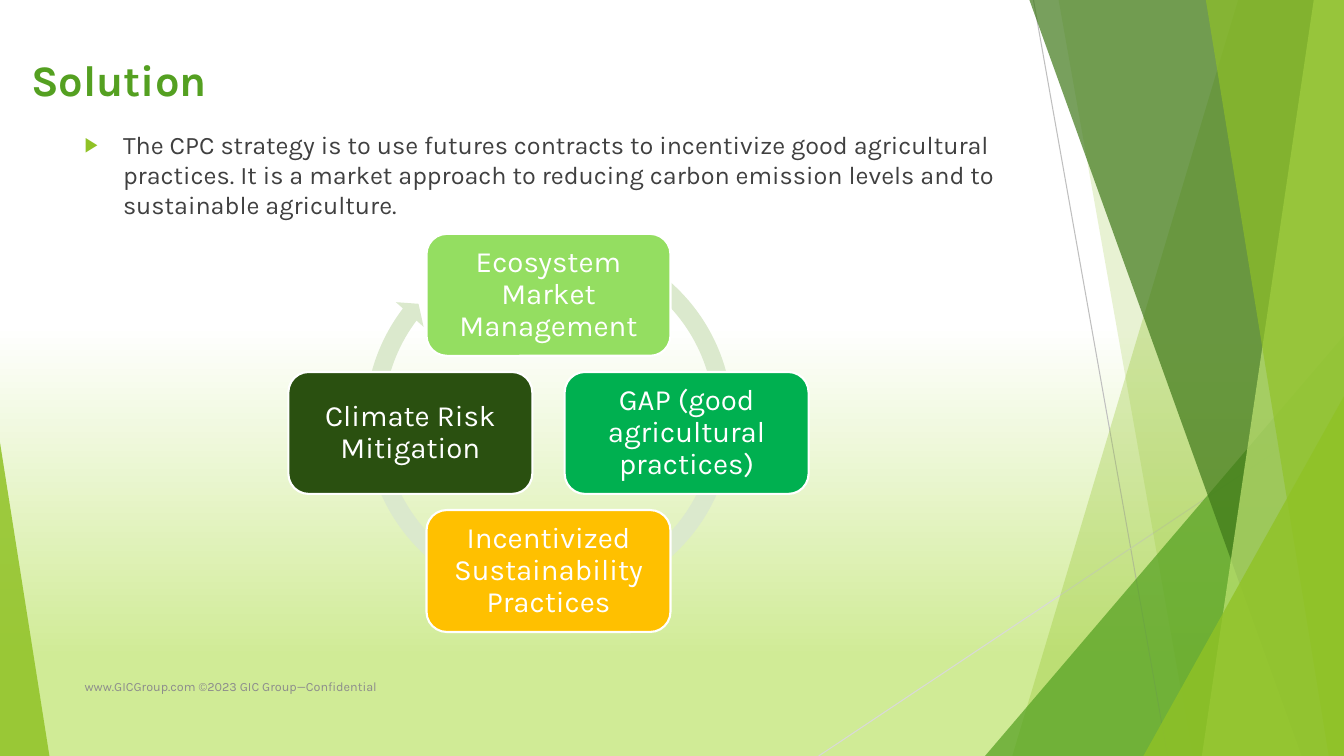
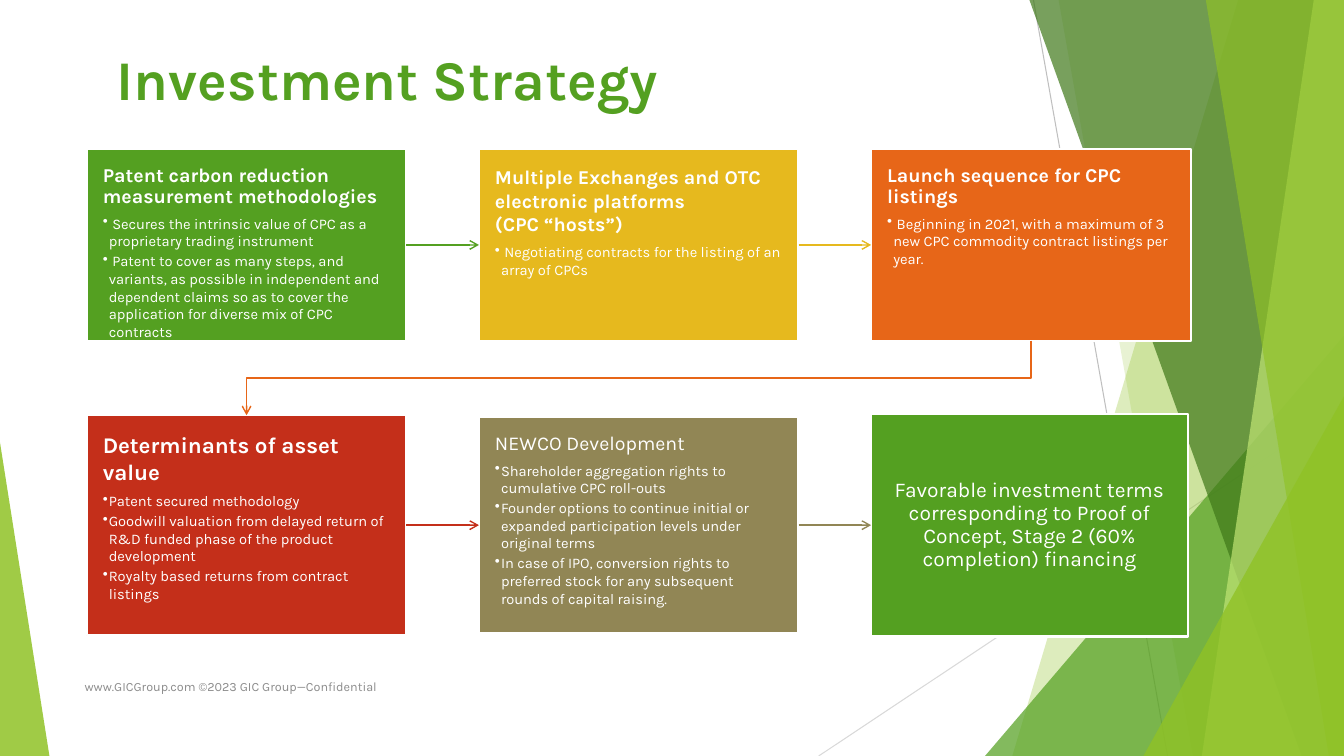
from copy import deepcopy
from dataclasses import dataclass

from lxml import etree
from pptx import Presentation
from pptx import util as u
from pptx.dml.color import RGBColor
from pptx.enum import shapes, text
from pptx.oxml.ns import qn


@dataclass(frozen=True)
class Theme:
    """Colours, font and type sizes of the deck."""
    font: str = "Karla"
    white: str = "FFFFFF"
    ink: str = "404040"
    muted: str = "8C8C8C"
    green: str = "54A021"
    lime: str = "90C226"
    pale_lime: str = "C0E474"
    forest: str = "3F7819"
    glow: str = "D0EB96"
    ring: str = "DBE9CD"
    light_green: str = "94DE61"
    emerald: str = "00B050"
    amber: str = "FFC000"
    dark_green: str = "2A5010"
    gold: str = "E6B91E"
    orange: str = "E76618"
    red: str = "C42F1A"
    olive: str = "918655"
    body_size: float = 18
    cycle_size: float = 21
    heading_size: float = 14
    detail_size: float = 10.5
    footer_size: float = 9


THEME = Theme()
WIDTH, HEIGHT = 13.33, 7.5
LEFT, MIDDLE = text.PP_ALIGN.LEFT, text.MSO_ANCHOR.MIDDLE
CENTER, TOP = text.PP_ALIGN.CENTER, text.MSO_ANCHOR.TOP
RECTANGLE = shapes.MSO_SHAPE.RECTANGLE
FOOTER = "www.GICGroup.com ©2023 GIC Group—Confidential"


def apply(target, values):
    """Set every attribute in values on target."""
    for name, value in values.items():
        setattr(target, name, value)


def rgb(color):
    """Turn a hex string into a colour."""
    return RGBColor.from_string(color)


def inches(values):
    """Convert a sequence of numbers to lengths."""
    return [u.Inches(value) for value in values]


def place(shape, at):
    """Move and size a shape."""
    apply(shape, dict(zip(("left", "top", "width", "height"), inches(at))))


def add_element(parent, tag, **attributes):
    """Append a DrawingML element."""
    return etree.SubElement(parent, qn(tag), attributes)


def paint(shape, color, alpha=100, outline=None):
    """Give a shape a flat fill and an optional outline."""
    shape.shadow.inherit = False
    shape.fill.solid()
    shape.fill.fore_color.rgb = rgb(color)
    if alpha < 100:
        tone = shape.element.spPr.find(".//" + qn("a:srgbClr"))
        add_element(tone, "a:alpha", val=str(alpha * 1000))
    if outline:
        shape.line.color.rgb = rgb(outline)
        shape.line.width = u.Pt(1.5)
    else:
        shape.line.fill.background()


def set_frame(shape, anchor=TOP, **margins):
    """Format a text frame and return it."""
    frame = shape.text_frame
    apply(frame, {"word_wrap": True, "auto_size": text.MSO_AUTO_SIZE.NONE,
                  "vertical_anchor": anchor})
    apply(frame, {f"margin_{side}": u.Inches(size) for side, size in margins.items()})
    return frame


def add_bullet(para, char, indent, color=None, percent=100):
    """Give a paragraph a hanging bullet."""
    props = para._p.get_or_add_pPr()
    length = u.Inches(indent)
    props.set("marL", str(length))
    props.set("indent", str(-length))
    if color:
        add_element(add_element(props, "a:buClr"), "a:srgbClr", val=color)
    add_element(props, "a:buSzPct", val=str(percent * 1000))
    add_element(props, "a:buChar", char=char)


def write(para, words, size, color=THEME.white, bold=False, align=LEFT, spacing=1.0, after=0):
    """Write formatted words into a paragraph."""
    para.text = words
    apply(para, {"alignment": align, "line_spacing": spacing,
                 "space_before": u.Pt(0), "space_after": u.Pt(after)})
    for span in para.runs:
        apply(span.font, {"name": THEME.font, "size": u.Pt(size), "bold": bold})
        span.font.color.rgb = rgb(color)
    for line_break in para._p.findall(qn("a:br")):
        line_break.append(deepcopy(para.runs[0]._r.rPr))


def equal_margins(size):
    """Return the same margin for all four sides."""
    return dict.fromkeys(("left", "top", "right", "bottom"), size)


def draw_line(page, start, end, color, weight, kind=shapes.MSO_CONNECTOR.STRAIGHT, arrow=False):
    """Draw a connector without a shadow."""
    line = page.shapes.add_connector(kind, *inches((*start, *end)))
    line.line.color.rgb = rgb(color)
    line.line.width = u.Pt(weight)
    props = line.element.spPr
    if arrow:
        add_element(props.find(qn("a:ln")), "a:tailEnd", type="arrow")
    add_element(props, "a:effectLst")
    return line


def draw_band(page, top_x, bottom_x, color, alpha):
    """Draw a full-height band that reaches the right edge."""
    outline = page.shapes.build_freeform(*inches((top_x, 0)), scale=1.0)
    corners = ((WIDTH, 0), (WIDTH, HEIGHT), (bottom_x, HEIGHT))
    outline.add_line_segments([inches(corner) for corner in corners], close=True)
    paint(outline.convert_to_shape(), color, alpha)


def draw_triangle(page, left, top, width, apex, color, alpha):
    """Draw a triangle that stands on the bottom edge."""
    shape = page.shapes.add_shape(shapes.MSO_SHAPE.ISOSCELES_TRIANGLE,
                                  *inches((left, top, width, HEIGHT - top)))
    shape.adjustments[0] = apex
    paint(shape, color, alpha)


def decorate(page):
    """Draw the facets and the footer that all slides share."""
    draw_line(page, (10.25, 0), (11.58, HEIGHT), "BFBFBF", 0.75)
    draw_line(page, (WIDTH, 4.03), (8.12, HEIGHT), "D9D9D9", 0.75)
    draw_band(page, 12.28, 10.04, THEME.lime, 30)
    draw_band(page, 10.5, 11.83, THEME.lime, 20)
    draw_triangle(page, 9.77, 3.33, 3.56, 1, THEME.green, 72)
    draw_band(page, 10.21, 12.91, THEME.forest, 70)
    draw_band(page, 13.03, 11.92, THEME.pale_lime, 70)
    draw_band(page, 11.96, 13.18, THEME.lime, 65)
    draw_triangle(page, 11.34, 3.93, 1.99, 1, THEME.lime, 80)
    draw_triangle(page, 0, 4.39, 0.49, 0, THEME.lime, 85)
    box = page.shapes.add_textbox(*inches((0.74, 6.61, 6.89, 0.4)))
    write(set_frame(box, MIDDLE).paragraphs[0], FOOTER, THEME.footer_size, THEME.muted)


def new_page(deck, layout, title, at, size, spacing=1.0, anchor=TOP, **margins):
    """Add a decorated slide with its title."""
    page = deck.slides.add_slide(deck.slide_layouts[layout])
    decorate(page)
    place(page.shapes.title, at)
    frame = set_frame(page.shapes.title, anchor, **margins)
    write(frame.paragraphs[0], title, size, THEME.green, bold=True, spacing=spacing)
    return page


def draw_cycle(page):
    """Draw the four steps around a circular arrow."""
    ring = page.shapes.add_shape(shapes.MSO_SHAPE.CIRCULAR_ARROW,
                                 *inches((3.53, 2.25, 3.83, 3.83)))
    for index, value in enumerate((0.047, 2.729, 130.267, 178.992, 0.048)):
        ring.adjustments[index] = value
    paint(ring, THEME.ring)
    steps = (
        ("Ecosystem Market Management", THEME.light_green, 0, -1),
        ("GAP (good agricultural practices)", THEME.emerald, 1, 0),
        ("Incentivized Sustainability Practices", THEME.amber, 0, 1),
        ("Climate Risk Mitigation", THEME.dark_green, -1, 0),
    )
    radius = 1.37
    for words, color, across, down in steps:
        at = (4.23 + across * radius, 3.69 + down * radius, 2.42, 1.21)
        box = page.shapes.add_shape(shapes.MSO_SHAPE.ROUNDED_RECTANGLE, *inches(at))
        paint(box, color, outline=THEME.white)
        frame = set_frame(box, MIDDLE, **equal_margins(0.09))
        write(frame.paragraphs[0], words, THEME.cycle_size, align=CENTER, spacing=0.9)


def solution_page(deck):
    """Build the solution slide."""
    page = new_page(deck, 1, "Solution", (0.21, 0.49, 10.13, 0.65), 31, 0.9, MIDDLE)
    fill = page.background.fill
    fill.gradient()
    fill.gradient_angle = 270
    for stop, position, color in zip(fill.gradient_stops, (0.43, 0.87),
                                     (THEME.white, THEME.glow)):
        stop.position = position
        stop.color.rgb = rgb(color)
    body = page.placeholders[1]
    place(body, (0.74, 1.23, 9.4, 4.24))
    para = set_frame(body).paragraphs[0]
    add_bullet(para, "▶", 0.38, THEME.lime, 80)
    write(para, "The CPC strategy is to use futures contracts to incentivize good agricultural "
          "practices. It is a market approach to reducing carbon emission levels and to "
          "sustainable agriculture.", THEME.body_size, THEME.ink)
    draw_cycle(page)


def draw_card(page, column, middle, height, color, heading, details=(),
              width=3.17, anchor=TOP, **style):
    """Draw a card with a heading and bulleted details."""
    at = (0.86 + 3.89 * column, middle - height / 2, width, height)
    card = page.shapes.add_shape(RECTANGLE, *inches(at))
    paint(card, color, outline=THEME.white)
    frame = set_frame(card, anchor, **equal_margins(0.16))
    write(frame.paragraphs[0], heading,
          **{"size": THEME.heading_size, "after": 5 if details else 0, **style})
    for detail in details:
        para = frame.add_paragraph()
        add_bullet(para, "•", 0.06)
        write(para, detail, THEME.detail_size, after=1.6)
    return card


def join(page, source, target, color):
    """Join two neighbouring cards with an arrow."""
    arrow = draw_line(page, (0, 0), (1, 0), color, 1, arrow=True)
    arrow.begin_connect(source, 3)
    arrow.end_connect(target, 1)


def join_rows(page, source, target, color):
    """Join the bottom of one card to the top of a card further left."""
    arrow = draw_line(page, (0, 0), (1, 1), color, 1, shapes.MSO_CONNECTOR.ELBOW, True)
    arrow.begin_connect(source, 2)
    arrow.end_connect(target, 0)
    across, down = arrow.width, arrow.height
    center_x, center_y = arrow.left + across // 2, arrow.top + down // 2
    apply(arrow, {"left": center_x - down // 2, "top": center_y - across // 2,
                  "width": down, "height": across})
    apply(arrow.element.spPr.xfrm, {"flipH": False, "flipV": False, "rot": 90.0})


def strategy_page(deck):
    """Build the investment strategy slide."""
    page = new_page(deck, 5, "Investment Strategy", (1.06, 0.33, 11.15, 1.2), 40, top=0.11)
    upper, lower = 2.43, 5.21
    patent = draw_card(
        page, 0, upper, 1.9, THEME.green, "Patent carbon reduction measurement methodologies",
        (" Secures the intrinsic value of CPC as a proprietary trading instrument",
         " Patent to cover as many steps, and variants, as possible in independent and dependent "
         "claims so as to cover the application for diverse mix of CPC contracts"),
        bold=True, spacing=0.9)
    exchanges = draw_card(
        page, 1, upper, 1.9, THEME.gold,
        "Multiple Exchanges and OTC electronic platforms\v(CPC “hosts”)",
        (" Negotiating contracts for the listing of an array of CPCs",), bold=True)
    launch = draw_card(
        page, 2, upper, 1.9, THEME.orange, "Launch sequence for CPC listings",
        (" Beginning in 2021, with a maximum of 3 new CPC commodity contract listings per year.",),
        bold=True, spacing=0.9)
    value = draw_card(
        page, 0, lower, 2.18, THEME.red, "Determinants of asset value",
        ("Patent secured methodology",
         "Goodwill valuation from delayed return of R&D funded phase of the product development",
         "Royalty based returns from contract listings"), bold=True, size=16)
    newco = draw_card(
        page, 1, lower, 2.14, THEME.olive, "NEWCO Development",
        ("Shareholder aggregation rights to cumulative CPC roll-outs",
         "Founder options to continue initial or expanded participation levels under original "
         "terms",
         "In case of IPO, conversion rights to preferred stock for any subsequent rounds of "
         "capital raising."), spacing=0.9)
    terms = draw_card(
        page, 2, lower, 2.21, THEME.green,
        "Favorable investment terms corresponding to Proof of Concept, Stage 2 (60% completion) "
        "financing", width=3.14, anchor=MIDDLE, size=15, align=CENTER, spacing=0.9)
    join(page, patent, exchanges, THEME.green)
    join(page, exchanges, launch, THEME.gold)
    join_rows(page, launch, value, THEME.orange)
    join(page, value, newco, THEME.red)
    join(page, newco, terms, THEME.olive)


def main():
    """Build and save the deck."""
    deck = Presentation()
    apply(deck, {"slide_width": u.Inches(WIDTH), "slide_height": u.Inches(HEIGHT)})
    solution_page(deck)
    strategy_page(deck)
    deck.save("out.pptx")


if __name__ == "__main__":
    main()
